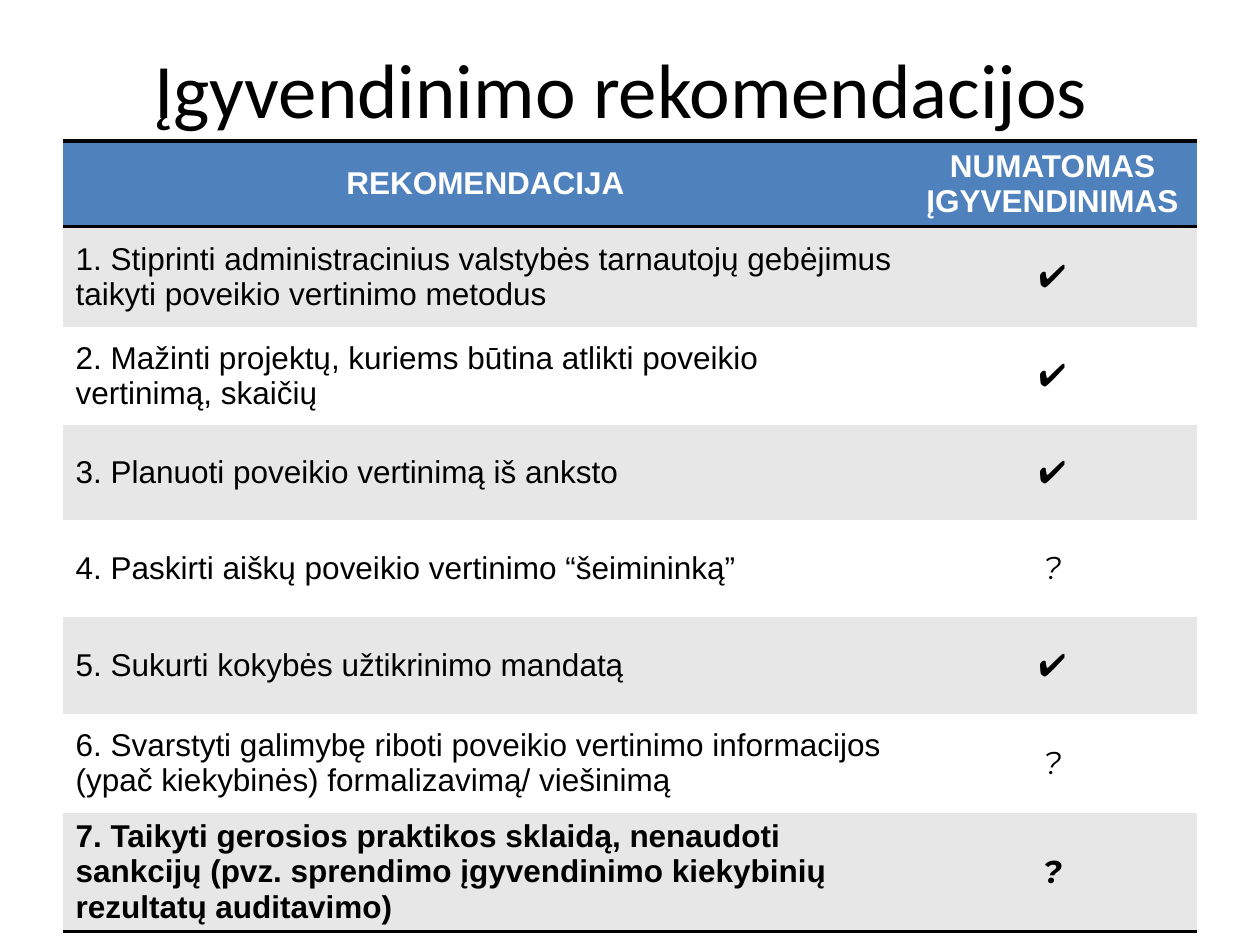
"""Builds a slide with a table of implementation recommendations."""
from lxml import etree
from pptx import Presentation
from pptx.dml.color import RGBColor
from pptx.enum.text import MSO_ANCHOR, PP_ALIGN
from pptx.oxml.ns import qn
from pptx.util import Pt

MIDDLE = MSO_ANCHOR.MIDDLE
LEFT, CENTER = PP_ALIGN.LEFT, PP_ALIGN.CENTER

TITLE = "Įgyvendinimo rekomendacijos "
HEADER = ("REKOMENDACIJA", "NUMATOMAS ĮGYVENDINIMAS")
RECOMMENDATIONS = [
    ("1. Stiprinti administracinius valstybės tarnautojų gebėjimus taikyti poveikio vertinimo metodus", "✔"),
    ("2. Mažinti projektų, kuriems būtina atlikti poveikio vertinimą, skaičių", "✔"),
    ("3. Planuoti poveikio vertinimą iš anksto", "✔"),
    ("4. Paskirti aiškų poveikio vertinimo “šeimininką”", "?"),
    ("5. Sukurti kokybės užtikrinimo mandatą", "✔"),
    ("6. Svarstyti galimybę riboti poveikio vertinimo informacijos (ypač kiekybinės) formalizavimą/ viešinimą", "?"),
    ("7. Taikyti gerosios praktikos sklaidą, nenaudoti sankcijų (pvz. sprendimo įgyvendinimo "
     "kiekybinių rezultatų auditavimo)", "?"),
]
COLORS = {"header": "4F81BD", "band": "E7E7E7", "plain": "FFFFFF", "text": "000000", "rule": "000000"}
COLUMN_WIDTHS = (845, 289)
ROW_HEIGHTS = (86, 100, 98, 95, 97, 97, 99, 112)
TABLE_LEFT, TABLE_TOP = 63, 141
RULE_WIDTH = Pt(2)


def px(length):
    return round(length * 914400 / 126)


def color(name):
    return RGBColor.from_string(COLORS[name])


def set_font(paragraph, name, size, color_name, bold=False, italic=False):
    font = paragraph.font
    font.name, font.size = name, Pt(size)
    font.bold, font.italic = bold, italic
    font.color.rgb = color(color_name)


def set_borders(cell, ruled_sides):
    properties = cell._tc.get_or_add_tcPr()
    for side in "LRTB":
        border = etree.SubElement(properties, qn(f"a:ln{side}"))
        if side in ruled_sides:
            border.set("w", str(RULE_WIDTH))
            fill = etree.SubElement(border, qn("a:solidFill"))
            etree.SubElement(fill, qn("a:srgbClr"), val=COLORS["rule"])
        else:
            border.set("w", "0")
            etree.SubElement(border, qn("a:noFill"))


def fill_cell(cell, text, row, column, last_row):
    is_header = row == 0
    ruled_sides = {0: "TB", 1: "T", last_row: "B"}.get(row, "")
    set_borders(cell, ruled_sides)
    cell.fill.solid()
    cell.fill.fore_color.rgb = color("header" if is_header else "band" if row % 2 else "plain")
    cell.vertical_anchor = MIDDLE
    cell.text = text
    paragraph = cell.text_frame.paragraphs[0]
    paragraph.alignment = CENTER if is_header or column == 1 else LEFT
    is_open = text == "?"
    set_font(paragraph, "Montserrat" if is_open else "Arial", 18,
             "plain" if is_header else "text", bold=row in (0, last_row), italic=is_open)


def add_recommendations(slide):
    rows = [HEADER, *RECOMMENDATIONS]
    table = slide.shapes.add_table(
        len(rows), len(HEADER), px(TABLE_LEFT), px(TABLE_TOP),
        px(sum(COLUMN_WIDTHS)), px(sum(ROW_HEIGHTS))).table
    table.last_row = True
    for column, width in zip(table.columns, COLUMN_WIDTHS):
        column.width = px(width)
    for row, height in zip(table.rows, ROW_HEIGHTS):
        row.height = px(height)
    for r, texts in enumerate(rows):
        for c, text in enumerate(texts):
            fill_cell(table.cell(r, c), text, r, c, len(rows) - 1)


def add_title(slide):
    title = slide.shapes.title
    title.left, title.top, title.width, title.height = px(63), px(9), px(1134), px(158)
    title.text = TITLE
    title.text_frame.vertical_anchor = MIDDLE
    paragraph = title.text_frame.paragraphs[0]
    paragraph.alignment = CENTER
    set_font(paragraph, "Calibri", 44, "text")


def main():
    presentation = Presentation()
    presentation.slide_width, presentation.slide_height = px(1260), px(945)
    slide = presentation.slides.add_slide(presentation.slide_layouts[5])
    add_title(slide)
    add_recommendations(slide)
    presentation.save("out.pptx")


if __name__ == "__main__":
    main()
